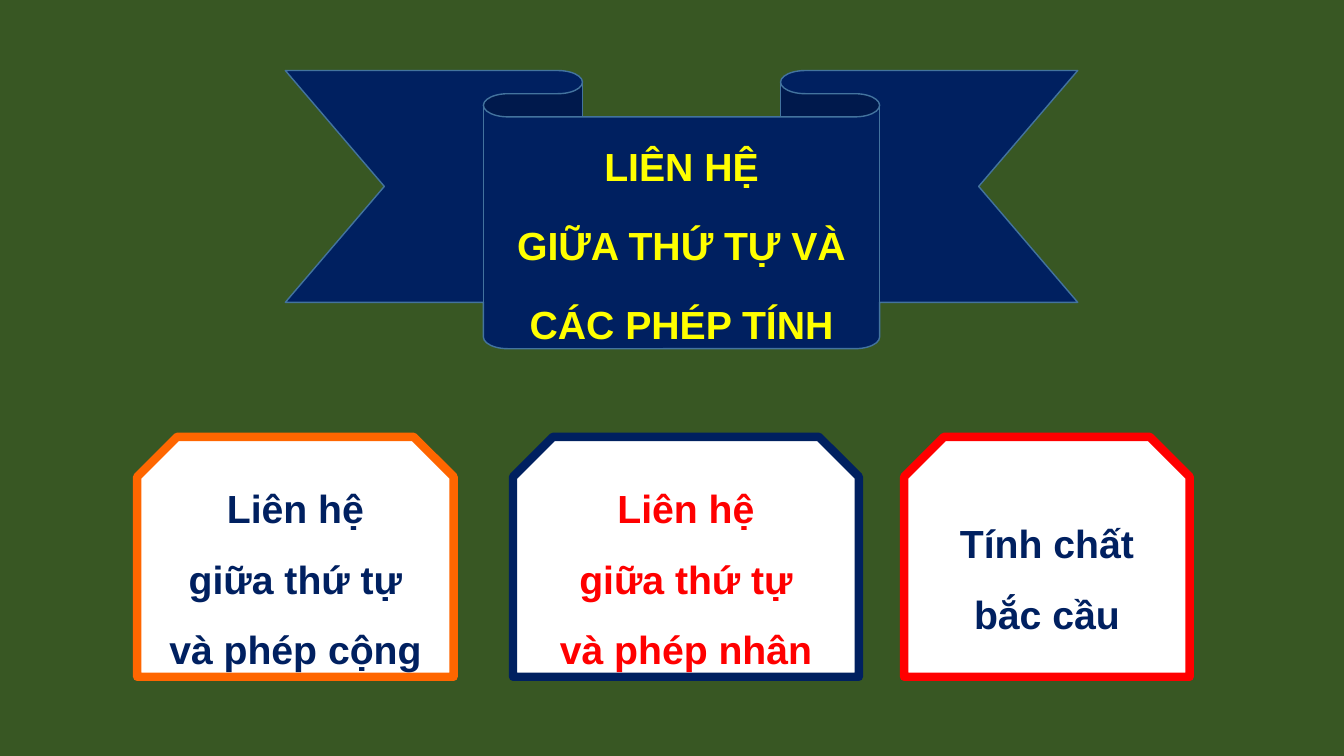
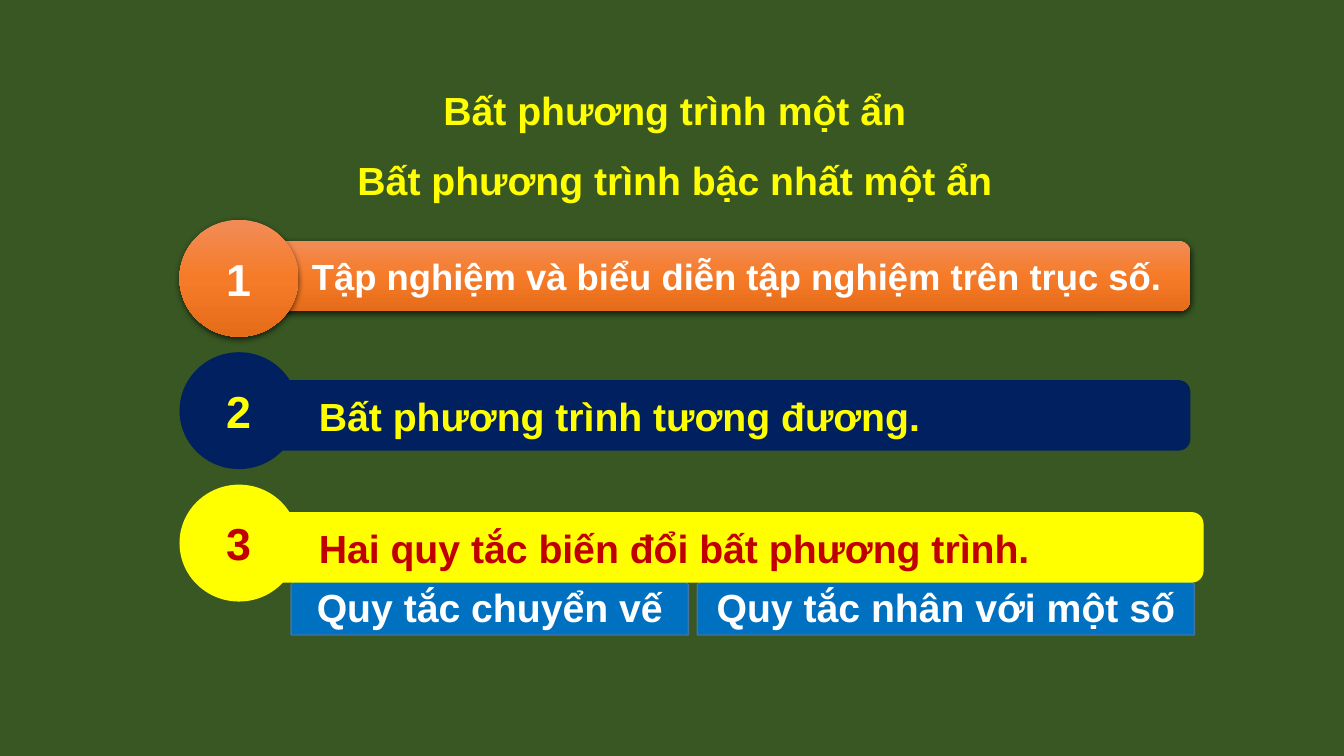
import copy

import pptx
import pptx.dml.color
import pptx.enum.shapes
import pptx.enum.text
import pptx.oxml
import pptx.oxml.ns
import pptx.util

Pt = pptx.util.Pt
SHAPE = pptx.enum.shapes.MSO_SHAPE
ANCHOR = pptx.enum.text.MSO_ANCHOR
ALIGN = pptx.enum.text.PP_ALIGN

COLORS = {
    "green": "385723", "navy": "002060", "edge": "43739E", "yellow": "FFFF00",
    "white": "FFFFFF", "orange": "FF6600", "red": "FF0000", "dark red": "C00000",
    "blue": "0070C0",
}
# Gradient stops: position and colour
GLOSS = [(0, "F18C57"), (0.5, "F67B28"), (1, "E56C19")]
SHADOW = (
    '<a:outerShdw %s blurRad="57150" dist="19050" dir="5400000" algn="ctr" rotWithShape="0">'
    '<a:srgbClr val="000000"><a:alpha val="63000"/></a:srgbClr></a:outerShdw>'
    % pptx.oxml.ns.nsdecls("a")
)


def rgb(name):
    return pptx.dml.color.RGBColor.from_string(COLORS[name])


class Show:
    """Holds the deck, its style and the current page."""

    font = "Arial"
    size = 28

    def __init__(self):
        self.deck = pptx.Presentation()
        self.deck.slide_width, self.deck.slide_height = Pt(960), Pt(540)
        self.page = None

    def new_page(self):
        self.page = self.deck.slides.add_slide(self.deck.slide_layouts[6])
        self.page.background.fill.solid()
        self.page.background.fill.fore_color.rgb = rgb("green")

    def put_text(self, frame, lines, color, size=None, align=ALIGN.CENTER, spacing=1.0, before=0):
        for index, line in enumerate(lines):
            para = frame.paragraphs[0] if index == 0 else frame.add_paragraph()
            para.text = line
            para.alignment = align
            para.line_spacing = spacing
            para.space_before = Pt(before)
            para.font.name = self.font
            para.font.size = Pt(size or self.size)
            para.font.bold = True
            para.font.color.rgb = rgb(color)

    def shape(self, kind, at, fill, lines, color, line=None, inset=None, **style):
        box = self.page.shapes.add_shape(kind, *map(Pt, at))
        box.shadow.inherit = False
        if fill == "gloss":
            self.gloss(box)
        else:
            box.fill.solid()
            box.fill.fore_color.rgb = rgb(fill)
        if line:
            box.line.color.rgb = rgb(line[0])
            box.line.width = Pt(line[1])
        else:
            box.line.fill.background()
        frame = box.text_frame
        frame.word_wrap = True
        frame.vertical_anchor = ANCHOR.MIDDLE
        if inset is not None:
            frame.margin_left = Pt(inset)
        self.put_text(frame, lines, color, **style)

    def gloss(self, box):
        """Three-stop gradient running downwards, with a soft shadow."""
        box.fill.gradient()
        box.fill.gradient_angle = 270
        properties = box._element.spPr
        stops = properties.find(".//" + pptx.oxml.ns.qn("a:gsLst"))
        stops.insert(1, copy.deepcopy(stops[0]))
        for stop, (position, color) in zip(box.fill.gradient_stops, GLOSS):
            stop.position = position
            stop.color.rgb = pptx.dml.color.RGBColor.from_string(color)
        effects = properties.find(pptx.oxml.ns.qn("a:effectLst"))
        effects.append(pptx.oxml.parse_xml(SHADOW))

    def card(self, left, width, edge, lines, color):
        self.shape(SHAPE.SNIP_2_SAME_RECTANGLE, (left, 312, width, 171.4), "white",
                   lines, color, line=(edge, 6), spacing=1.5)

    def button(self, left, width, label):
        self.shape(SHAPE.SNIP_2_SAME_RECTANGLE, (left, 410.4, width, 43.2), "blue",
                   [label], "white", line=("edge", 1))

    def item(self, number, bar_top, bar_width, fill, label, color, inset=46, size=None):
        self.shape(SHAPE.ROUNDED_RECTANGLE, (179.3, bar_top, bar_width, 50.4), fill,
                   [label], color, inset=inset, size=size, align=ALIGN.LEFT)
        self.shape(SHAPE.OVAL, (128.2, 157 + 94.6 * (number - 1), 85, 83.5), fill,
                   [str(number)], color, size=32)

    def heading(self, at, lines):
        box = self.page.shapes.add_textbox(*map(Pt, at))
        box.text_frame.word_wrap = False
        box.text_frame.auto_size = pptx.enum.text.MSO_AUTO_SIZE.SHAPE_TO_FIT_TEXT
        self.put_text(box.text_frame, lines, "yellow", spacing=1.5)


def main():
    show = Show()

    # Order and operations: ribbon over three cards
    show.new_page()
    show.shape(SHAPE.DOWN_RIBBON, (203.8, 50.4, 566, 198.7), "navy",
               ["LIÊN HỆ", "GIỮA THỨ TỰ VÀ", "CÁC PHÉP TÍNH"], "yellow",
               line=("edge", 1), spacing=1.5, before=6)
    show.card(98, 226, "orange", ["Liên hệ", "giữa thứ tự", "và phép cộng"], "navy")
    show.card(366.5, 247, "navy", ["Liên hệ", "giữa thứ tự", "và phép nhân"], "red")
    show.card(645.8, 204, "red", ["Tính chất bắc cầu"], "navy")

    # Inequalities: numbered bars, with two rules tucked under the last
    show.new_page()
    show.item(1, 172, 671, "gloss", "Tập nghiệm và biểu diễn tập nghiệm trên trục số.",
              "white", inset=41, size=26)
    show.item(2, 271.5, 671, "navy", "Bất phương trình tương đương.", "yellow")
    show.button(208, 283.7, "Quy tắc chuyển vế")
    show.button(498.2, 355, "Quy tắc nhân với một số")
    show.item(3, 365.8, 680.4, "yellow", "Hai quy tắc biến đổi bất phương trình.", "dark red")
    show.heading((245.5, 41, 473, 108.7),
                 ["Bất phương trình một ẩn", "Bất phương trình bậc nhất một ẩn"])

    show.deck.save("out.pptx")


if __name__ == "__main__":
    main()
